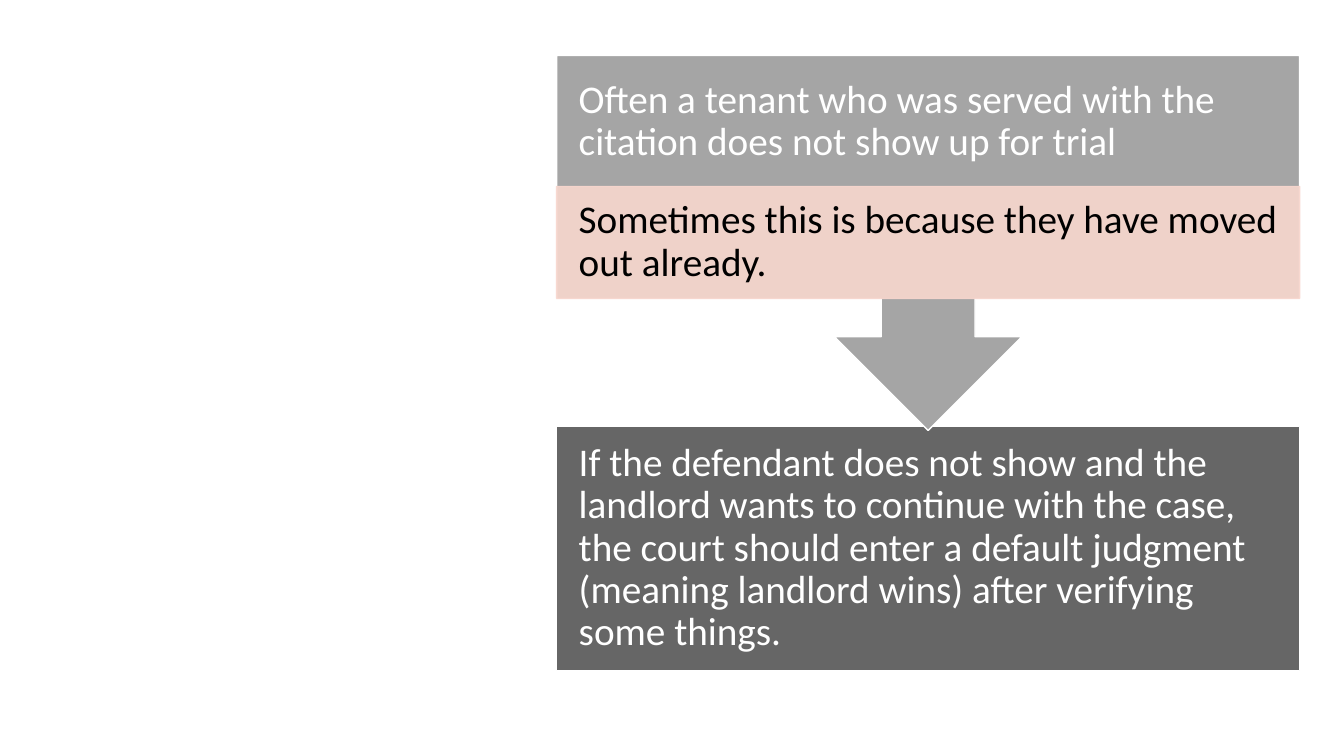
from lxml.etree import SubElement
from pptx import Presentation
from pptx.dml.color import RGBColor
from pptx.enum.shapes import MSO_SHAPE
from pptx.enum.text import MSO_ANCHOR, PP_ALIGN
from pptx.oxml.ns import qn
from pptx.util import Pt

PX = 9144  # 100 px to the inch
COLORS = {
    "white": "FFFFFF",
    "black": "000000",
    "callout": "A5A5A5",
    "reason": "F8D7CE",
    "outcome": "666666",
}


def px(*lengths):
    return [length * PX for length in lengths]


def paint(color_format, color, opacity):
    color_format.rgb = RGBColor.from_string(COLORS[color])
    if opacity < 100:
        node = color_format._xFill.find(qn("a:srgbClr"))
        SubElement(node, qn("a:alpha"), val=str(opacity * 1000))


def add_block(slide, preset, box, fill, line, opacity=100):
    shape = slide.shapes.add_shape(preset, *px(*box))
    shape.shadow.inherit = False
    shape.fill.solid()
    paint(shape.fill.fore_color, fill, opacity)
    shape.line.width = Pt(1)
    paint(shape.line.color, line, opacity)
    return shape


def write_text(shape, text, color="white", size=28, font="Calibri", vertical_inset=22):
    frame = shape.text_frame
    frame.word_wrap = True
    frame.vertical_anchor = MSO_ANCHOR.MIDDLE
    frame.margin_left, frame.margin_right = px(22, 21)
    frame.margin_top = frame.margin_bottom = vertical_inset * PX
    paragraph = frame.paragraphs[0]
    paragraph.alignment = PP_ALIGN.LEFT
    paragraph.line_spacing = 0.9
    run = paragraph.add_run()
    run.text = text
    run.font.size = Pt(size)
    run.font.name = font
    run.font.color.rgb = RGBColor.from_string(COLORS[color])


def add_outcome(slide, box):
    shape = add_block(slide, MSO_SHAPE.RECTANGLE, box, "outcome", "white")
    write_text(shape, "If the defendant does not show and the landlord wants to continue "
                      "with the case, the court should enter a default judgment "
                      "(meaning landlord wins) after verifying some things.")


def add_situation(slide, box):
    left, top, width, height = box
    title_height, reason_height = 131, 111

    # Callout turned over, so that its arrow points down
    callout = add_block(slide, MSO_SHAPE.UP_ARROW_CALLOUT, box, "callout", "white")
    callout.rotation = 180

    # Upright title over the callout body
    title = slide.shapes.add_textbox(*px(left, top, width, title_height))
    write_text(title, "Often a tenant who was served with the citation "
                      "does not show up for trial")

    # Reason band under the title
    band = (left, top + title_height - 1, width, reason_height)
    reason = add_block(slide, MSO_SHAPE.RECTANGLE, band, "reason", "reason", opacity=90)
    write_text(reason, "Sometimes this is because they have moved out already.",
               color="black", vertical_inset=4)


def main():
    presentation = Presentation()
    presentation.slide_width, presentation.slide_height = px(1333, 750)
    slide = presentation.slides.add_slide(presentation.slide_layouts[6])
    left, width = 552, 737
    add_outcome(slide, (left, 423, width, 242))
    add_situation(slide, (left, 55, width, 372))
    presentation.save("out.pptx")


if __name__ == "__main__":
    main()
